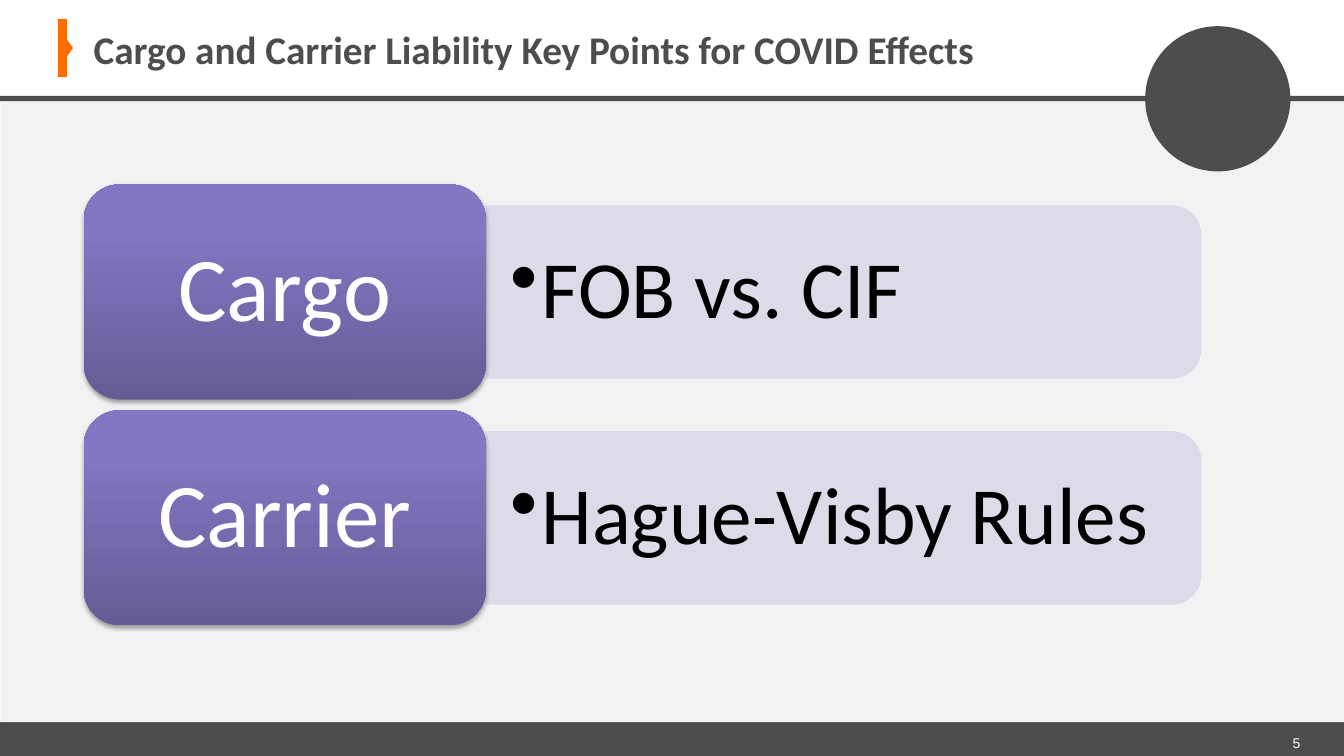
from lxml.etree import SubElement
from pptx import Presentation
from pptx.dml.color import RGBColor
from pptx.enum.shapes import MSO_CONNECTOR, MSO_SHAPE
from pptx.enum.text import MSO_ANCHOR, PP_ALIGN
from pptx.oxml import parse_xml
from pptx.oxml.ns import nsdecls, qn
from pptx.util import Cm, Pt

COLORS = {
    "dark": "4D4D4D",
    "pale": "F2F2F2",
    "white": "FFFFFF",
    "black": "000000",
    "orange": "FE6B01",
    "lavender": "DBD9E8",
}
PURPLE_STOPS = [(0, "655C96"), (80, "8377C3"), (100, "8276C5")]
WIDTH, HEIGHT = 33.87, 19.05


def add_alpha(shape, percent):
    """Make the solid fill and line of a shape partly transparent."""
    properties = shape._element.spPr
    for color in properties.iter(qn("a:srgbClr")):
        SubElement(color, qn("a:alpha"), val=str(percent * 1000))


class SlideBuilder:
    """Holds the colours, the font and the current slide; lengths are in cm."""

    def __init__(self, slide, font="Calibri"):
        self.slide = slide
        self.font = font

    def color(self, name):
        return RGBColor.from_string(COLORS[name])

    def shape(self, kind, left, top, width, height, fill=None, rotation=0):
        shape = self.slide.shapes.add_shape(
            kind, Cm(left), Cm(top), Cm(width), Cm(height))
        shape.shadow.inherit = False
        shape.rotation = rotation
        shape.line.fill.background()
        if fill:
            shape.fill.solid()
            shape.fill.fore_color.rgb = self.color(fill)
        return shape

    def line(self, start, end, color, width):
        connector = self.slide.shapes.add_connector(
            MSO_CONNECTOR.STRAIGHT, *(Cm(value) for value in start + end))
        connector.line.color.rgb = self.color(color)
        connector.line.width = Pt(width)
        SubElement(connector._element.spPr, qn("a:effectLst"))

    def set_text(self, shape, text, size, color, align=PP_ALIGN.LEFT,
                 bold=False, font=None, spacing=1.0, insets=(0.25, 0.13),
                 anchor=MSO_ANCHOR.TOP, wrap=True, bullet_indent=None):
        """Set and format the single paragraph of a shape."""
        frame = shape.text_frame
        frame.text = text
        frame.word_wrap = wrap
        frame.vertical_anchor = anchor
        frame.margin_left = frame.margin_right = Cm(insets[0])
        frame.margin_top = frame.margin_bottom = Cm(insets[1])
        paragraph = frame.paragraphs[0]
        paragraph.alignment = align
        paragraph.line_spacing = spacing
        if bullet_indent:
            properties = paragraph._p.get_or_add_pPr()
            properties.set("marL", str(Cm(bullet_indent)))
            properties.set("indent", str(-Cm(bullet_indent)))
            SubElement(properties, qn("a:buChar"), char="•")
        run_font = paragraph.runs[0].font
        run_font.name = font or self.font
        run_font.size = Pt(size)
        run_font.bold = bold
        run_font.color.rgb = self.color(color)

    def text(self, left, top, width, height, text, size, color, **style):
        box = self.slide.shapes.add_textbox(
            Cm(left), Cm(top), Cm(width), Cm(height))
        self.set_text(box, text, size, color, **style)

    def panel(self, left, top, width, height, text):
        """Bulleted panel with rounded right corners."""
        shape = self.shape(
            MSO_SHAPE.ROUND_2_SAME_RECTANGLE, left + (width - height) / 2,
            top - (width - height) / 2, height, width, "lavender", rotation=90)
        shape.line.color.rgb = self.color("lavender")
        shape.line.width = Pt(0.75)
        add_alpha(shape, 90)
        self.text(left, top + 0.21, width - 0.2, height - 0.42, text, 58,
                  "black", spacing=0.9, insets=(0.61, 0.3),
                  anchor=MSO_ANCHOR.MIDDLE, bullet_indent=0.79)

    def label(self, left, top, width, height, text):
        """Purple gradient label with a soft shadow below."""
        shape = self.shape(MSO_SHAPE.ROUNDED_RECTANGLE, left, top, width, height)
        properties = shape._element.spPr
        stops = "".join(
            f'<a:gs pos="{position * 1000}"><a:srgbClr val="{color}"/></a:gs>'
            for position, color in PURPLE_STOPS)
        properties.find(qn("a:prstGeom")).addnext(parse_xml(
            f'<a:gradFill {nsdecls("a")} rotWithShape="1"><a:gsLst>{stops}'
            '</a:gsLst><a:lin ang="16200000" scaled="0"/></a:gradFill>'))
        shadow = SubElement(
            properties.find(qn("a:effectLst")), qn("a:outerShdw"),
            blurRad=str(Pt(3.1)), dist=str(Pt(1.8)), dir="5400000",
            rotWithShape="0")
        color = SubElement(shadow, qn("a:srgbClr"), val=COLORS["black"])
        SubElement(color, qn("a:alpha"), val="35000")
        self.set_text(shape, text, 65, "white", align=PP_ALIGN.CENTER,
                      spacing=0.9, insets=(0.7, 0.36), anchor=MSO_ANCHOR.MIDDLE)


def main():
    presentation = Presentation()
    presentation.slide_width = Cm(WIDTH)
    presentation.slide_height = Cm(HEIGHT)
    builder = SlideBuilder(
        presentation.slides.add_slide(presentation.slide_layouts[6]))

    # Frame: footer, body, header rule and title marker
    builder.shape(MSO_SHAPE.RECTANGLE, 0, 18.19, WIDTH, 0.86, "dark")
    builder.text(32.08, 18.16, 0.94, 0.81, "5", 10, "white", font="Arial",
                 align=PP_ALIGN.RIGHT, spacing=1.5, wrap=False)
    builder.shape(MSO_SHAPE.RECTANGLE, 0.02, 2.54, WIDTH, 15.66, "pale")
    builder.shape(MSO_SHAPE.RECTANGLE, 0, 2.42, WIDTH, 0.13, "dark")
    builder.line((1.58, 0.49), (1.58, 1.95), "orange", 6)
    builder.shape(MSO_SHAPE.ISOSCELES_TRIANGLE, 1.5, 1.12, 0.5, 0.18,
                  "orange", rotation=90)
    builder.shape(MSO_SHAPE.OVAL, 28.86, 0.66, 3.66, 3.66, "dark")
    builder.text(2.11, 0.51, 25.93, 1.45,
                 "Cargo and Carrier Liability Key Points for COVID Effects",
                 28, "dark", bold=True)

    # One row per topic: panel behind, label in front
    rows = [("Cargo", "FOB vs. CIF"), ("Carrier", "Hague-Visby Rules")]
    for index, (topic, point) in enumerate(rows):
        top = 4.65 + index * 5.69
        builder.panel(12.25, top + 0.54, 18.01, 4.34, point)
        builder.label(2.11, top, 10.14, 5.42, topic)

    presentation.save("out.pptx")


if __name__ == "__main__":
    main()
